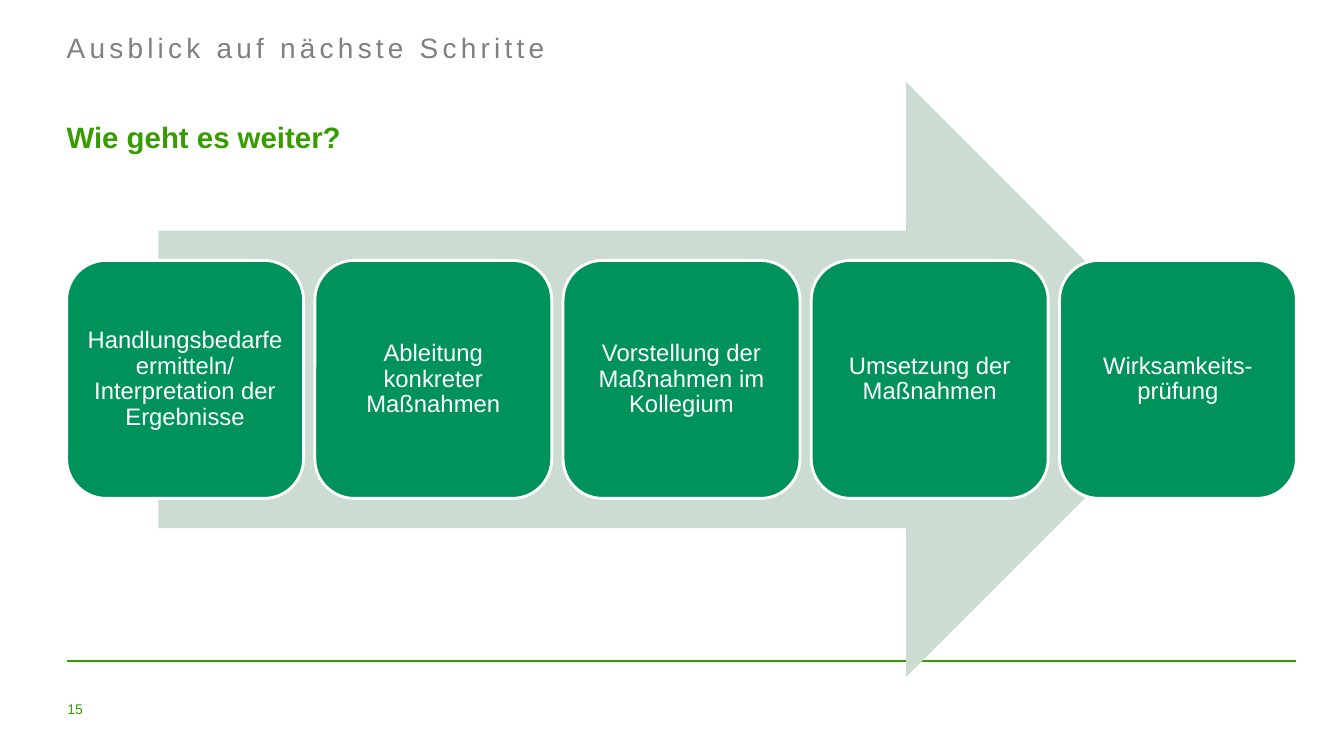
from lxml import etree
from pptx import Presentation
from pptx.dml.color import RGBColor
from pptx.enum import shapes, text
from pptx.oxml import ns
from pptx.util import Pt

HEADING = "Wie geht es weiter?"
TOPIC = "Ausblick auf nächste Schritte"
PAGE_NUMBER = "15"
STEPS = [
    "Handlungsbedarfe ermitteln/ Interpretation der Ergebnisse",
    "Ableitung konkreter Maßnahmen",
    "Vorstellung der Maßnahmen im Kollegium",
    "Umsetzung der Maßnahmen",
    "Wirksamkeits-prüfung",
]

GREEN = RGBColor(0x37, 0x9C, 0x00)
GREY = RGBColor(0x80, 0x80, 0x80)
PALE = RGBColor(0xCC, 0xDC, 0xD2)
STEP_GREEN = RGBColor(0x00, 0x92, 0x5B)
WHITE = RGBColor(0xFF, 0xFF, 0xFF)

LEFT, RIGHT = 47.6, 926
STEP_TOP, STEP_WIDTH, STEP_HEIGHT = 186, 169.2, 170
RULE_Y = 472.3


def place(box, left, top, width, height):
    box.left, box.top = Pt(left), Pt(top)
    box.width, box.height = Pt(width), Pt(height)


def write(box, words, size, color, bold=False, inset=0, centred=False, spacing=1.0):
    frame = box.text_frame
    frame.text = words
    frame_format = {
        "word_wrap": True,
        "auto_size": text.MSO_AUTO_SIZE.NONE,
        "vertical_anchor": text.MSO_ANCHOR.MIDDLE if centred else text.MSO_ANCHOR.TOP,
    }
    for side in ("left", "top", "right", "bottom"):
        frame_format["margin_" + side] = Pt(inset)
    for name, value in frame_format.items():
        setattr(frame, name, value)
    para = frame.paragraphs[0]
    para_format = {
        "alignment": text.PP_ALIGN.CENTER if centred else text.PP_ALIGN.LEFT,
        "line_spacing": spacing,
        "space_before": Pt(0),
    }
    for name, value in para_format.items():
        setattr(para, name, value)
    span = para.runs[0]
    span_format = {"name": "Arial", "size": Pt(size), "bold": bold}
    for name, value in span_format.items():
        setattr(span.font, name, value)
    span.font.color.rgb = color
    return para


def add_filled(page, kind, color, left, top, width, height):
    box = page.shapes.add_shape(kind, Pt(left), Pt(top), Pt(width), Pt(height))
    box.shadow.inherit = False
    box.fill.solid()
    box.fill.fore_color.rgb = color
    box.line.fill.background()
    return box


def add_rule(page):
    rule = page.shapes.add_connector(
        shapes.MSO_CONNECTOR.STRAIGHT, Pt(LEFT), Pt(RULE_Y), Pt(RIGHT), Pt(RULE_Y)
    )
    rule.line.color.rgb = GREEN
    rule.line.width = Pt(1)
    etree.SubElement(rule._element.spPr, ns.qn("a:effectLst"))


def add_headings(page):
    title, body = page.placeholders[0], page.placeholders[1]
    place(title, LEFT, 82.8, RIGHT - LEFT, 26)
    write(title, HEADING, 21, GREEN, bold=True, spacing=1.1)

    place(body, LEFT, 21.7, RIGHT - LEFT, 24.4)
    para = write(body, TOPIC, 20, GREY)
    properties = para._p.get_or_add_pPr()
    properties.set("marL", "0")
    properties.set("indent", "0")
    etree.SubElement(properties, ns.qn("a:buNone"))
    para.runs[0]._r.get_or_add_rPr().set("spc", "300")


def add_steps(page):
    add_filled(page, shapes.MSO_SHAPE.RIGHT_ARROW, PALE, 113.2, 58.5, 746.6, 425)
    pitch = (RIGHT - LEFT - STEP_WIDTH) / (len(STEPS) - 1)
    for index, words in enumerate(STEPS):
        step = add_filled(
            page, shapes.MSO_SHAPE.ROUNDED_RECTANGLE, STEP_GREEN,
            LEFT + index * pitch, STEP_TOP, STEP_WIDTH, STEP_HEIGHT,
        )
        step.line.color.rgb = WHITE
        step.line.width = Pt(2)
        write(step, words, 17, WHITE, inset=5, centred=True, spacing=0.9)


def main():
    deck = Presentation()
    deck.slide_width, deck.slide_height = Pt(960), Pt(540)
    page = deck.slides.add_slide(deck.slide_layouts[1])
    add_headings(page)
    add_rule(page)
    number = page.shapes.add_textbox(Pt(48.2), Pt(500.4), Pt(216), Pt(28.8))
    write(number, PAGE_NUMBER, 10, GREEN)
    add_steps(page)
    deck.save("out.pptx")


if __name__ == "__main__":
    main()
